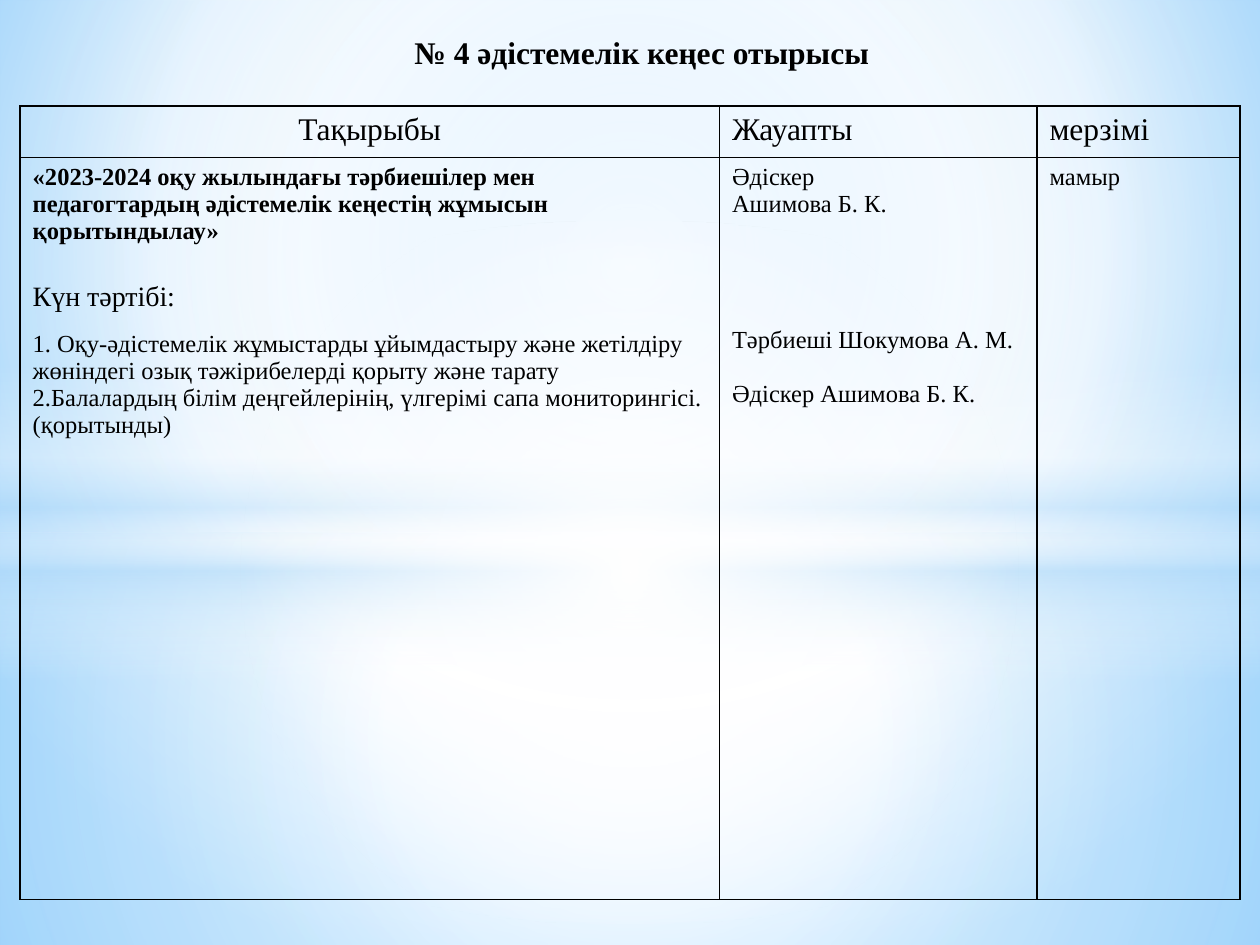
from lxml import etree
from pptx import Presentation
from pptx.dml.color import RGBColor
from pptx.enum import shapes, text
from pptx.oxml.ns import qn
from pptx.util import Inches, Pt

FONT = "Times New Roman"
BLACK = "000000"
WHITE = "FFFFFF"
PALE_BLUE = "B4DCFA"
CENTER_FOCUS = (50, 50, 50, 50)

# Each paragraph: text, size, bold, space before, space after
HEADERS = ["Тақырыбы", "Жауапты", "мерзімі"]
BODY = [
    [
        ("«2023-2024 оқу жылындағы тәрбиешілер мен педагогтардың әдістемелік "
         "кеңестің жұмысын қорытындылау»", 14, True, 10.4, 10.4),
        ("Күн тәртібі:", 16, False, 10.4, 10.4),
        ("1. Оқу-әдістемелік жұмыстарды ұйымдастыру және жетілдіру жөніндегі "
         "озық тәжірибелерді қорыту және тарату", 14, False, 0, 0),
        ("2.Балалардың білім деңгейлерінің, үлгерімі сапа мониторингісі."
         "(қорытынды)", 14, False, 0, 0),
    ],
    [
        ("Әдіскер", 14, False, 0, 0),
        ("Ашимова Б. К.", 14, False, 0, 0),
        ("Тәрбиеші Шокумова А. М.", 14, False, 62, 0),
        ("Әдіскер Ашимова Б. К.", 14, False, 15.5, 0),
    ],
    [("мамыр", 14, False, 0, 0)],
]


def color(value):
    return RGBColor.from_string(value)


def set_gradient(fill, element, stops, focus=None):
    """Stops are (position, colour, opacity) in percent; focus makes it radial."""
    fill.gradient()
    gradient = element.find(".//" + qn("a:gradFill"))
    for child in list(gradient):
        gradient.remove(child)
    stop_list = etree.SubElement(gradient, qn("a:gsLst"))
    for position, value, opacity in stops:
        stop = etree.SubElement(stop_list, qn("a:gs"), pos=str(position * 1000))
        rgb = etree.SubElement(stop, qn("a:srgbClr"), val=value)
        if opacity < 100:
            etree.SubElement(rgb, qn("a:alpha"), val=str(opacity * 1000))
    if focus:
        circle = etree.SubElement(gradient, qn("a:path"))
        circle.set("path", "circle")
        edges = {side: str(percent * 1000) for side, percent in zip("ltrb", focus)}
        etree.SubElement(circle, qn("a:fillToRect"), **edges)
    else:
        etree.SubElement(gradient, qn("a:lin"), ang="5400000", scaled="0")


def add_glow(slide, kind, top, height, stops, focus=None):
    glow = slide.shapes.add_shape(kind, 0, Inches(top), Inches(10), Inches(height))
    glow.shadow.inherit = False
    glow.line.fill.background()
    set_gradient(glow.fill, glow._element, stops, focus)


def add_backdrop(slide):
    set_gradient(slide.background.fill, slide._element,
                 [(0, "9ED5FF", 100), (60, WHITE, 100), (100, "5BB9FF", 100)],
                 (20, 10, 20, 60))
    rectangle, oval = shapes.MSO_SHAPE.RECTANGLE, shapes.MSO_SHAPE.OVAL
    add_glow(slide, rectangle, 4.23, 3.27,
             [(0, WHITE, 91), (37, WHITE, 76), (100, PALE_BLUE, 79)], CENTER_FOCUS)
    add_glow(slide, rectangle, 0, 4.23,
             [(0, WHITE, 89), (48, WHITE, 62), (100, PALE_BLUE, 79)], CENTER_FOCUS)
    add_glow(slide, rectangle, 2.9, 2.5,
             [(0, WHITE, 0), (29, WHITE, 30), (45, PALE_BLUE, 40),
              (55, WHITE, 26), (65, PALE_BLUE, 60), (100, WHITE, 0)])
    add_glow(slide, oval, 1.75, 5.58, [(0, WHITE, 100), (54, WHITE, 0)], CENTER_FOCUS)


def write_paragraph(paragraph, words, size, bold=False, before=0, after=0):
    paragraph.text = words
    paragraph.space_before = Pt(before)
    paragraph.space_after = Pt(after)
    font = paragraph.runs[0].font
    font.name, font.size, font.bold = FONT, Pt(size), bold
    font.color.rgb = color(BLACK)


def add_title(slide, left, top, width, height):
    frame = slide.shapes.add_textbox(left, top, width, height).text_frame
    frame.word_wrap = False
    frame.auto_size = text.MSO_AUTO_SIZE.SHAPE_TO_FIT_TEXT
    write_paragraph(frame.paragraphs[0], "№ 4 әдістемелік кеңес отырысы", 18, True)


def format_cell(cell):
    """Clear the fill and draw a thin black border on all sides."""
    cell.fill.background()
    properties = cell._tc.get_or_add_tcPr()
    for index, side in enumerate(("a:lnL", "a:lnR", "a:lnT", "a:lnB")):
        line = etree.Element(qn(side), w=str(Pt(1)))
        solid = etree.SubElement(line, qn("a:solidFill"))
        etree.SubElement(solid, qn("a:srgbClr"), val=BLACK)
        properties.insert(index, line)


def add_agenda(slide, left, top, width, height):
    table = slide.shapes.add_table(2, 3, left, top, width, height).table
    table.first_row = table.horz_banding = False
    header_height = Inches(0.41)
    table.rows[0].height = header_height
    table.rows[1].height = height - header_height
    for column, column_width in zip(table.columns, (5.55, 2.52, 1.61)):
        column.width = Inches(column_width)
    rows = [[[(header, 18)] for header in HEADERS], BODY]
    for row_index, row in enumerate(rows):
        for column_index, entries in enumerate(row):
            cell = table.cell(row_index, column_index)
            format_cell(cell)
            frame = cell.text_frame
            for index, entry in enumerate(entries):
                paragraph = frame.add_paragraph() if index else frame.paragraphs[0]
                write_paragraph(paragraph, *entry)
    table.cell(0, 0).text_frame.paragraphs[0].alignment = text.PP_ALIGN.CENTER


def main():
    presentation = Presentation()
    presentation.slide_width, presentation.slide_height = Inches(10), Inches(7.5)
    slide = presentation.slides.add_slide(presentation.slide_layouts[6])
    add_backdrop(slide)
    add_title(slide, Inches(3.19), Inches(0.21), Inches(3.85), Inches(0.4))
    add_agenda(slide, Inches(0.16), Inches(0.84), Inches(9.68), Inches(6.3))
    presentation.save("out.pptx")


if __name__ == "__main__":
    main()
